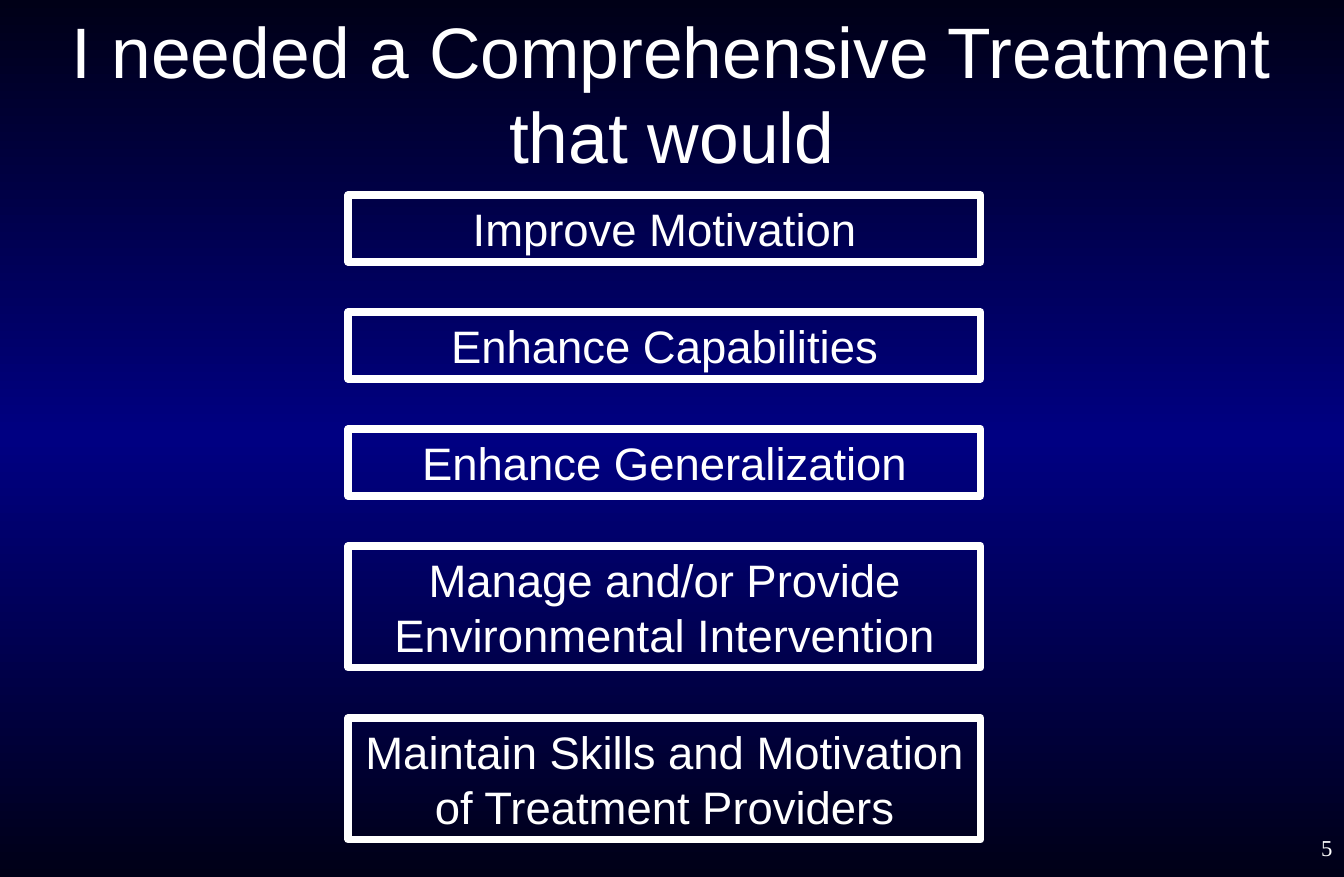
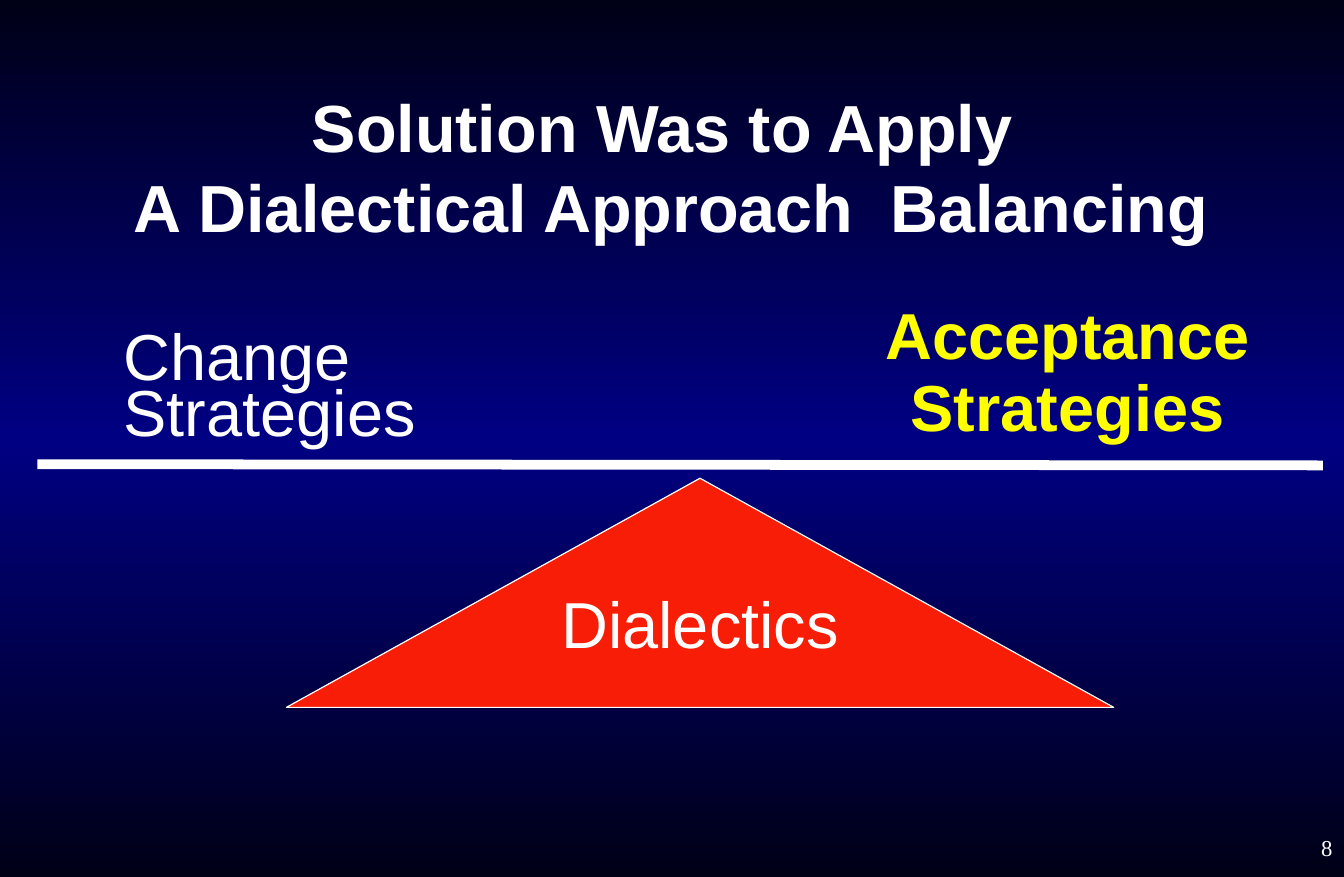
from copy import deepcopy

from lxml.etree import SubElement
from pptx import Presentation
from pptx.dml.color import RGBColor
from pptx.enum.shapes import MSO_CONNECTOR as CONNECTOR, MSO_SHAPE as SHAPE
from pptx.enum.text import MSO_ANCHOR as ANCHOR, MSO_AUTO_SIZE as AUTO, PP_ALIGN as ALIGN
from pptx.oxml.ns import qn
from pptx.util import Inches, Pt

COLORS = {
    "night": "000017",
    "navy": "000082",
    "white": "FFFFFF",
    "yellow": "FFFF00",
    "red": "F71D06",
    "black": "000000",
}
TITLE_ONLY, TITLE_AND_BODY = 5, 1


def rgb(name):
    return RGBColor.from_string(COLORS[name])


class Deck:
    def __init__(self, width, height):
        self.prs = Presentation()
        self.prs.slide_width = Inches(width)
        self.prs.slide_height = Inches(height)
        self.width, self.height = width, height
        self.s = None
        self.paint_background()

    def paint_background(self):
        fill = self.prs.slide_master.background.fill
        fill.gradient()
        fill.gradient_angle = 90
        first, last = fill.gradient_stops
        gs_list = first._gs.getparent()
        gs_list.insert(1, deepcopy(first._gs))
        stops = ((0, "night"), (0.5, "navy"), (1, "night"))
        for stop, (position, color) in zip(fill.gradient_stops, stops):
            stop.position = position
            stop.color.rgb = rgb(color)

    def slide(self, layout, number):
        self.s = self.prs.slides.add_slide(self.prs.slide_layouts[layout])
        self.text([str(number)], (self.width - 2.4, self.height - 0.5, 2.4, 0.5),
                  14, align=ALIGN.RIGHT, anchor=ANCHOR.MIDDLE, font="Times New Roman")

    def place(self, sp, box):
        for name, value in zip(("left", "top", "width", "height"), box):
            setattr(sp, name, Inches(value))

    def set_text(self, sp, lines, size, color="white", bold=False, align=ALIGN.LEFT,
                 anchor=ANCHOR.TOP, auto=AUTO.NONE, font="Arial", spacing=(), before=0):
        tf = sp.text_frame
        frame = {"word_wrap": True, "auto_size": auto, "vertical_anchor": anchor,
                 "margin_left": Inches(0.1), "margin_right": Inches(0.1),
                 "margin_top": Inches(0.05), "margin_bottom": Inches(0.05)}
        for name, value in frame.items():
            setattr(tf, name, value)
        tf.text = "\n".join(lines)
        style = {"name": font, "size": Pt(size), "bold": bold}
        for i, p in enumerate(tf.paragraphs):
            p.alignment = align
            p.line_spacing = spacing[i] if spacing else 1.0
            p.space_before = Pt(0)
            if before:
                gap = p._p.pPr.find(qn("a:spcBef"))
                gap.remove(gap[0])
                SubElement(gap, qn("a:spcPct"), val=str(before * 1000))
            for r in p.runs:
                for name, value in style.items():
                    setattr(r.font, name, value)
                r.font.color.rgb = rgb(color)

    def title(self, text, height, size, bold=False):
        sp = self.s.shapes.title
        self.place(sp, (0, 0, self.width, height))
        self.set_text(sp, [text], size, bold=bold, align=ALIGN.CENTER, anchor=ANCHOR.MIDDLE)
        for r in sp.text_frame.paragraphs[0].runs:
            self.text_shadow(r)

    def text_shadow(self, r):
        fill = r._r.rPr.find(qn("a:solidFill"))
        effects = SubElement(r._r.rPr, qn("a:effectLst"))
        fill.addnext(effects)
        shadow = SubElement(effects, qn("a:outerShdw"), dist="38100", dir="2700000")
        SubElement(shadow, qn("a:srgbClr"), val=COLORS["black"])

    def body(self, lines, box, size, **style):
        sp = self.s.placeholders[1]
        self.place(sp, box)
        self.set_text(sp, lines, size, **style)
        for p in sp.text_frame.paragraphs:
            for name in ("marL", "indent"):
                p._p.pPr.set(name, "0")
            SubElement(p._p.pPr, qn("a:buNone"))

    def text(self, lines, box, size, **style):
        sp = self.s.shapes.add_textbox(*map(Inches, box))
        self.set_text(sp, lines, size, **style)

    def outline(self, sp, width):
        sp.shadow.inherit = False
        sp.line.color.rgb = rgb("white")
        sp.line.width = Pt(width)

    def frame(self, lines, box):
        sp = self.s.shapes.add_shape(SHAPE.RECTANGLE, *map(Inches, box))
        sp.fill.background()
        self.outline(sp, 4.75)
        self.set_text(sp, lines, 28, align=ALIGN.CENTER, anchor=ANCHOR.MIDDLE,
                      auto=AUTO.SHAPE_TO_FIT_TEXT)

    def polygon(self, points, color):
        start, *rest = [tuple(map(Inches, point)) for point in points]
        builder = self.s.shapes.build_freeform(*start)
        builder.add_line_segments(rest, close=True)
        sp = builder.convert_to_shape()
        sp.fill.solid()
        sp.fill.fore_color.rgb = rgb(color)
        self.outline(sp, 0.75)

    def line(self, start, end, width):
        cx = self.s.shapes.add_connector(CONNECTOR.STRAIGHT, *map(Inches, start + end))
        cx.line.color.rgb = rgb("white")
        cx.line.width = Pt(width)
        SubElement(cx._element.spPr, qn("a:effectLst"))


def treatment_goals(deck):
    deck.slide(TITLE_ONLY, 5)
    deck.title("I needed a Comprehensive Treatment that would", 1.58, 44)
    goals = (
        (["Improve Motivation"], 0.57),
        (["Enhance Capabilities"], 0.57),
        (["Enhance Generalization"], 0.57),
        (["Manage and/or Provide", "Environmental Intervention"], 1.04),
        (["Maintain Skills and Motivation of Treatment Providers"], 1.04),
    )
    top, gap = 1.67, 0.43
    for lines, height in goals:
        deck.frame(lines, (2.98, top, 5.41, height))
        top += height + gap


def dialectical_balance(deck):
    deck.slide(TITLE_AND_BODY, 8)
    deck.title("Solution Was to Apply \vA Dialectical Approach  Balancing", 2.83, 41, bold=True)
    grow = {"auto": AUTO.SHAPE_TO_FIT_TEXT, "before": 50}
    deck.body(["Acceptance", "Strategies"], (6.77, 2.76, 4.73, 1.11), 40, color="yellow",
              bold=True, align=ALIGN.CENTER, spacing=(0.5, 0.5), **grow)
    deck.polygon([(5.99, 4.09), (9.53, 6.05), (2.45, 6.05)], "red")
    deck.line((0.32, 3.97), (11.32, 3.98), 6)
    deck.text(["Change", "Strategies"], (0.96, 2.83, 5.56, 1.05), 40,
              spacing=(0.7, 0.2), **grow)
    deck.text(["Dialectics"], (4.14, 4.94, 3.7, 0.78), 40, align=ALIGN.CENTER, **grow)


def main():
    deck = Deck(11.5, 7.5)
    treatment_goals(deck)
    dialectical_balance(deck)
    deck.prs.save("out.pptx")


if __name__ == "__main__":
    main()
